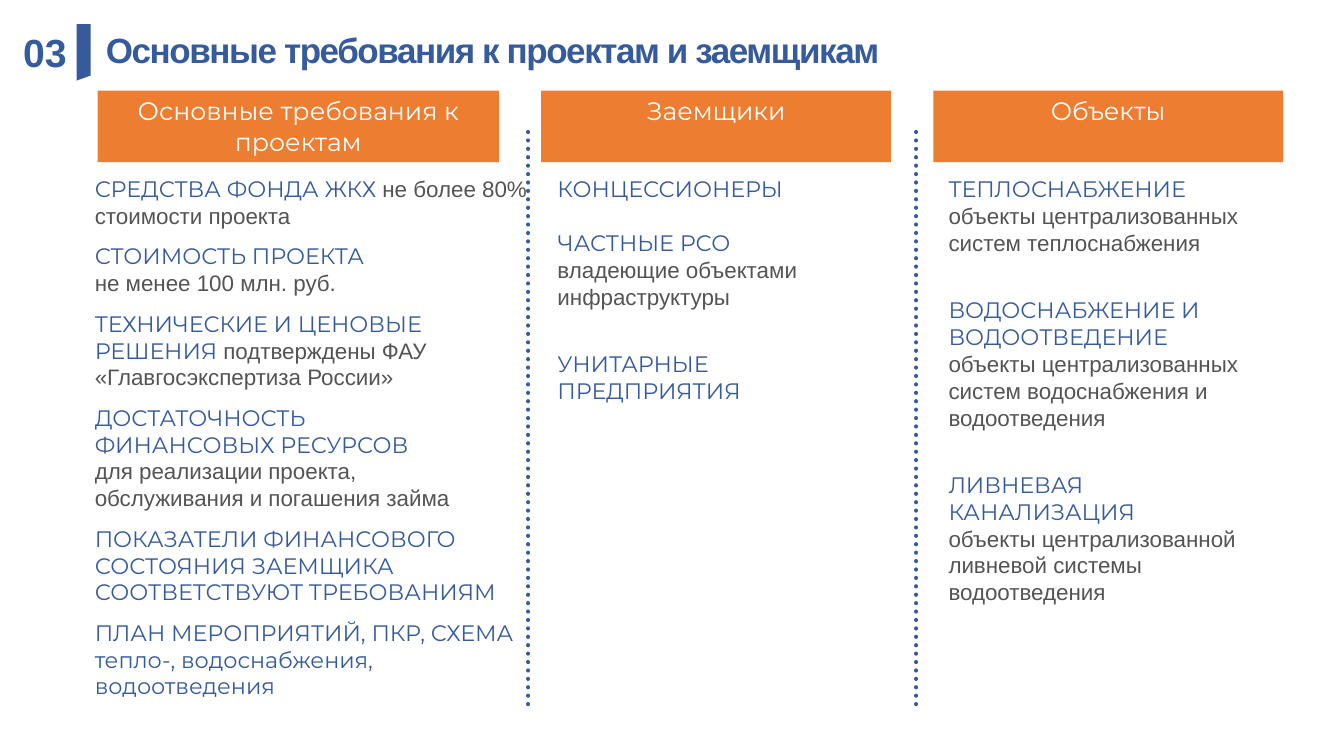
from dataclasses import dataclass

from lxml import etree
from pptx import Presentation
from pptx import util as u
from pptx.dml.color import RGBColor
from pptx.enum import dml, shapes, text
from pptx.oxml.ns import qn


@dataclass(frozen=True)
class Theme:
    blue: str = "365B9D"
    flag: str = "375A9B"
    orange: str = "ED7D31"
    gray: str = "545454"
    white: str = "FFFFFF"
    sans: str = "Arial"
    display: str = "Montserrat"
    number: float = 28
    title: float = 25
    head: float = 18
    body: float = 16
    pitch: float = 19.2
    inset: float = 3.6
    dot: float = 3

    def font(self, face, size, color, bold=False):
        return {"name": face, "size": u.Pt(size), "bold": bold, "color": color}


class Deck:
    def __init__(self, theme):
        self.theme = theme
        self.deck = Presentation()
        self.deck.slide_width, self.deck.slide_height = u.Pt(960), u.Pt(540)
        self.slide = self.deck.slides.add_slide(self.deck.slide_layouts[4])
        self.items = self.slide.shapes

    def style(self, font, look):
        for key, value in look.items():
            if key == "color":
                font.color.rgb = RGBColor.from_string(value)
            else:
                setattr(font, key, value)

    def place(self, shape, box):
        for key, value in zip(("left", "top", "width", "height"), box):
            setattr(shape, key, u.Pt(value))

    def frame(self, shape, anchor=text.MSO_ANCHOR.TOP, wrap=True):
        frame = shape.text_frame
        look = {"word_wrap": wrap, "auto_size": text.MSO_AUTO_SIZE.NONE,
                "vertical_anchor": anchor}
        for side in ("left", "top", "right", "bottom"):
            look["margin_" + side] = u.Pt(self.theme.inset)
        for key, value in look.items():
            setattr(frame, key, value)
        return frame

    def put(self, par, words, look):
        run = par.add_run()
        run.text = words
        self.style(run.font, look)
        return run

    def title(self, words, box):
        t, shape = self.theme, self.items.title
        self.place(shape, box)
        par = self.frame(shape, text.MSO_ANCHOR.MIDDLE).paragraphs[0]
        par.alignment, par.line_spacing = text.PP_ALIGN.LEFT, 0.9
        run = self.put(par, words, t.font(t.sans, t.title, t.blue, True))
        run._r.get_or_add_rPr().set("spc", "-100")

    def number(self, words, box):
        t = self.theme
        shape = self.items.add_textbox(*map(u.Pt, box))
        par = self.frame(shape, text.MSO_ANCHOR.MIDDLE, False).paragraphs[0]
        self.put(par, words, t.font(t.sans, t.number, t.blue, True))

    def fill(self, shape, color):
        shape.shadow.inherit = False
        shape.fill.solid()
        shape.fill.fore_color.rgb = RGBColor.from_string(color)
        shape.line.fill.background()

    def flag(self, points):
        points = [(u.Pt(x), u.Pt(y)) for x, y in points]
        draft = self.items.build_freeform(*points[0])
        draft.add_line_segments(points[1:], close=True)
        self.fill(draft.convert_to_shape(), self.theme.flag)

    def head(self, words, box):
        t = self.theme
        shape = self.items.add_shape(shapes.MSO_SHAPE.RECTANGLE, *map(u.Pt, box))
        self.fill(shape, t.orange)
        par = self.frame(shape).paragraphs[0]
        par.alignment = text.PP_ALIGN.CENTER
        self.put(par, words, t.font(t.display, t.head, t.white))

    def column(self, shape, box, lines):
        t = self.theme
        looks = {"key": t.font(t.display, t.body, t.blue),
                 "note": t.font(t.sans, t.body, t.gray)}
        self.place(shape, box)
        frame = self.frame(shape)
        for index, (gap, *runs) in enumerate(lines):
            par = frame.add_paragraph() if index else frame.paragraphs[0]
            props = par._p.get_or_add_pPr()
            props.set("marL", "0")
            props.set("indent", "0")
            etree.SubElement(props, qn("a:buNone"))
            par.alignment = text.PP_ALIGN.LEFT
            par.line_spacing = u.Pt(t.pitch)
            par.space_before, par.space_after = u.Pt(gap), u.Pt(0)
            for kind, words in runs:
                self.put(par, words, looks[kind])

    def divider(self, x, top, end):
        t = self.theme
        bar = self.items.add_connector(
            shapes.MSO_CONNECTOR.STRAIGHT, *map(u.Pt, (x, top, x, end)))
        bar.line.color.rgb = RGBColor.from_string(t.blue)
        bar.line.width = u.Pt(t.dot)
        bar.line.dash_style = dml.MSO_LINE.ROUND_DOT
        props = bar._element.spPr
        props.find(qn("a:ln")).set("cap", "rnd")
        etree.SubElement(props, qn("a:effectLst"))


SMALL, MID, LARGE = 9.6, 19.2, 28.8

PROJECTS = [
    (0, ("key", "СРЕДСТВА ФОНДА ЖКХ "), ("note", "не более 80% стоимости проекта")),
    (SMALL, ("key", "СТОИМОСТЬ ПРОЕКТА")),
    (0, ("note", "не менее 100 млн. руб.")),
    (SMALL, ("key", "ТЕХНИЧЕСКИЕ И ЦЕНОВЫЕ РЕШЕНИЯ "),
     ("note", "подтверждены ФАУ «Главгосэкспертиза России»")),
    (SMALL, ("key", "ДОСТАТОЧНОСТЬ")),
    (0, ("key", "ФИНАНСОВЫХ РЕСУРСОВ")),
    (0, ("note", "для реализации проекта,")),
    (0, ("note", "обслуживания и погашения займа")),
    (SMALL, ("key", "ПОКАЗАТЕЛИ ФИНАНСОВОГО СОСТОЯНИЯ ЗАЕМЩИКА "
             "СООТВЕТСТВУЮТ ТРЕБОВАНИЯМ")),
    (SMALL, ("key", "ПЛАН МЕРОПРИЯТИЙ, ПКР, СХЕМА тепло-, водоснабжения, "
             "водоотведения")),
]
LENDERS = [
    (0, ("key", "КОНЦЕССИОНЕРЫ")),
    (MID, ("key", "ЧАСТНЫЕ РСО")),
    (0, ("note", "владеющие объектами инфраструктуры")),
    (LARGE, ("key", "УНИТАРНЫЕ ПРЕДПРИЯТИЯ")),
]
OBJECTS = [
    (0, ("key", "ТЕПЛОСНАБЖЕНИЕ")),
    (0, ("note", "объекты централизованных систем теплоснабжения")),
    (LARGE, ("key", "ВОДОСНАБЖЕНИЕ И ВОДООТВЕДЕНИЕ")),
    (0, ("note", "объекты централизованных систем водоснабжения и водоотведения")),
    (LARGE, ("key", "ЛИВНЕВАЯ КАНАЛИЗАЦИЯ")),
    (0, ("note", "объекты централизованной ливневой системы водоотведения")),
]
COLUMNS = [
    ("Основные требования к проектам", 69.8, 286.6, (64.1, 121.7, 319.7, 385.2), PROJECTS),
    ("Заемщики", 386.6, 249.8, (394.6, 121.7, 241.2, 303.1), LENDERS),
    ("Объекты", 666.7, 249.8, (673.9, 121.7, 225.4, 317.5), OBJECTS),
]


def main():
    deck = Deck(Theme())
    deck.flag([(54.7, 17.3), (64.8, 17.3), (64.8, 54), (54.7, 57.6)])
    deck.number("03", (13, 16.6, 38.9, 41))
    deck.title("Основные требования к проектам и заемщикам", (72, 20.2, 828, 34.6))
    bodies = [s for s in deck.slide.placeholders if s.placeholder_format.idx]
    for body, (name, left, width, box, lines) in zip(bodies, COLUMNS):
        deck.head(name, (left, 64.8, width, 51.1))
        deck.column(body, box, lines)
    for spare in bodies[len(COLUMNS):]:
        spare._element.getparent().remove(spare._element)
    for x in (377.3, 654.5):
        deck.divider(x, 94.3, 505.4)
    deck.deck.save("out.pptx")


if __name__ == "__main__":
    main()
